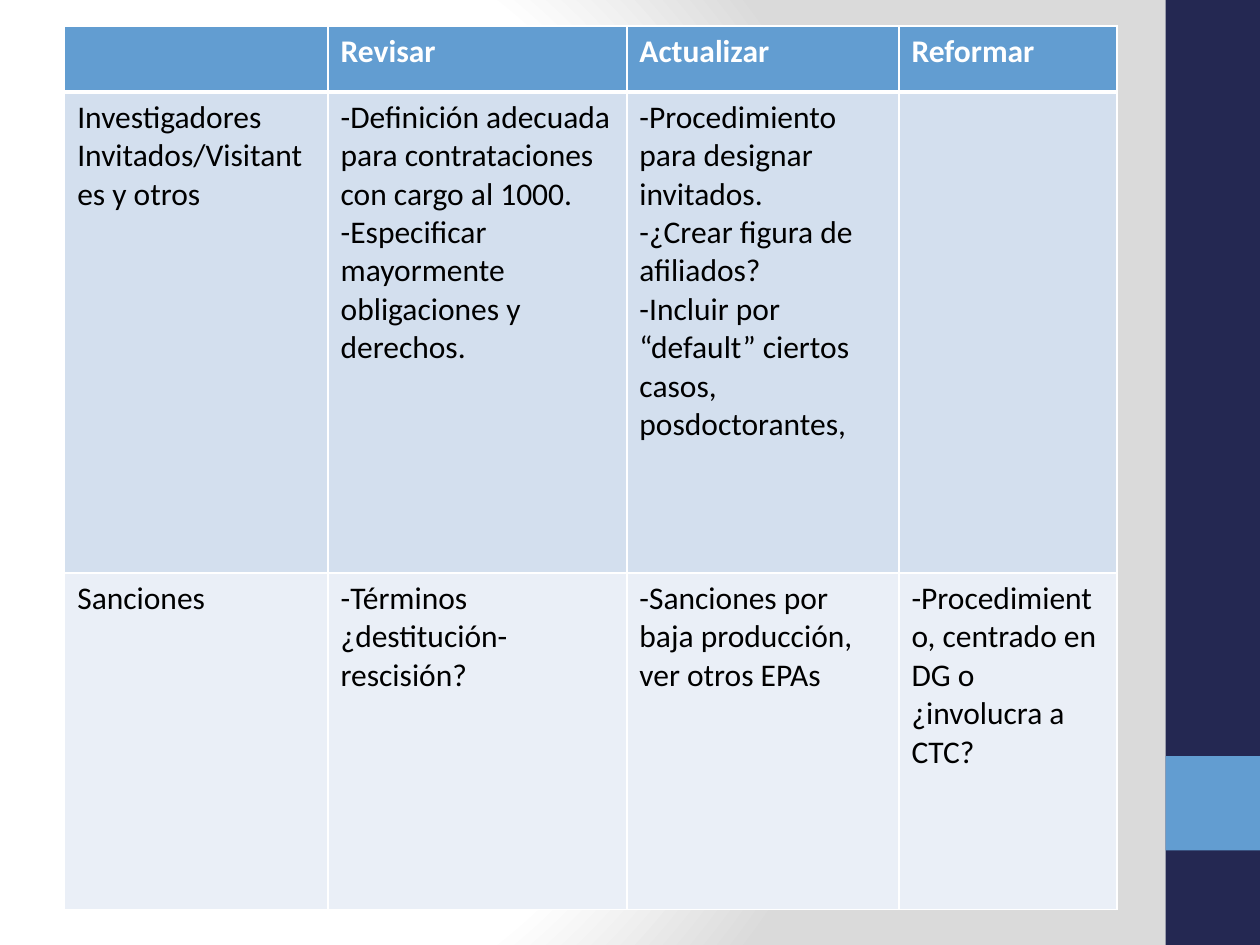
import pptx
import pptx.util
import pptx.dml.color
import pptx.enum.shapes
import pptx.oxml
import pptx.oxml.ns

Pt = pptx.util.Pt
NS = pptx.oxml.ns.nsdecls("a")

HUES = {
    "navy": "242852",
    "blue": "629DD1",
    "pale": "D3DFEE",
    "light": "EAEFF7",
    "white": "FFFFFF",
    "gray": "DADADA",
    "black": "000000",
}
COLS = [150.5, 170.75, 155.5, 124.5]
ROWS = [37.5, 275, 192.25]
FILLS = ["blue", "pale", "light"]
TEXTS = [
    ["", "Revisar", "Actualizar", "Reformar"],
    [
        "Investigadores Invitados/Visitantes y otros",
        "-Definición adecuada para contrataciones con cargo al 1000.\n"
        "-Especificar mayormente obligaciones y derechos.",
        "-Procedimiento para designar invitados.\n"
        "-¿Crear figura de afiliados?\n"
        "-Incluir por “default” ciertos casos, posdoctorantes,",
        "",
    ],
    [
        "Sanciones",
        "-Términos ¿destitución-rescisión?",
        "-Sanciones por baja producción, ver otros EPAs",
        "-Procedimiento, centrado en DG o ¿involucra a CTC?",
    ],
]


def rgb(name):
    return pptx.dml.color.RGBColor.from_string(HUES[name])


def set_back(slide):
    slide.background.fill.solid()
    stops = "".join(
        f'<a:gs pos="{pos * 1000}"><a:srgbClr val="{HUES[name]}"/></a:gs>'
        for pos, name in [(0, "white"), (75, "white"), (100, "gray")]
    )
    grad = pptx.oxml.parse_xml(
        f'<a:gradFill {NS} rotWithShape="1"><a:gsLst>{stops}</a:gsLst>'
        '<a:path path="circle"><a:fillToRect l="20000" t="50000" '
        'r="100000" b="50000"/></a:path></a:gradFill>'
    )
    props = slide.element.find(".//" + pptx.oxml.ns.qn("p:bgPr"))
    props.replace(props[0], grad)


def add_band(slide, top, height, hue):
    kind = pptx.enum.shapes.MSO_SHAPE.RECTANGLE
    band = slide.shapes.add_shape(kind, Pt(666), Pt(top), Pt(54), Pt(height))
    band.shadow.inherit = False
    band.fill.solid()
    band.fill.fore_color.rgb = rgb(hue)
    band.line.fill.background()


def set_edges(cell, row):
    widths = {"L": 1, "R": 1, "T": 3 if row == 1 else 1, "B": 3 if row == 0 else 1}
    props = cell._tc.get_or_add_tcPr()
    for i, (side, width) in enumerate(widths.items()):
        edge = pptx.oxml.parse_xml(
            f'<a:ln{side} {NS} w="{Pt(width)}"><a:solidFill>'
            f'<a:srgbClr val="{HUES["white"]}"/></a:solidFill></a:ln{side}>'
        )
        props.insert(i, edge)


def fill_cell(cell, text, row):
    cell.fill.solid()
    cell.fill.fore_color.rgb = rgb(FILLS[row])
    set_edges(cell, row)
    cell.text = text
    for para in cell.text_frame.paragraphs:
        para.font.name = "Calibri"
        para.font.size = Pt(18)
        para.font.bold = row == 0
        para.font.color.rgb = rgb("white" if row == 0 else "black")


def add_grid(slide):
    grid = slide.shapes.add_table(
        len(ROWS), len(COLS), Pt(37), Pt(15), Pt(sum(COLS)), Pt(sum(ROWS))
    ).table
    for col, width in zip(grid.columns, COLS):
        col.width = Pt(width)
    for r, (height, texts) in enumerate(zip(ROWS, TEXTS)):
        grid.rows[r].height = Pt(height)
        for c, text in enumerate(texts):
            fill_cell(grid.cell(r, c), text, r)


def main():
    deck = pptx.Presentation()
    deck.slide_width, deck.slide_height = Pt(720), Pt(540)
    slide = deck.slides.add_slide(deck.slide_layouts[6])
    set_back(slide)
    add_band(slide, 0, 540, "navy")
    add_band(slide, 432, 54, "blue")
    add_grid(slide)
    deck.save("out.pptx")


if __name__ == "__main__":
    main()
